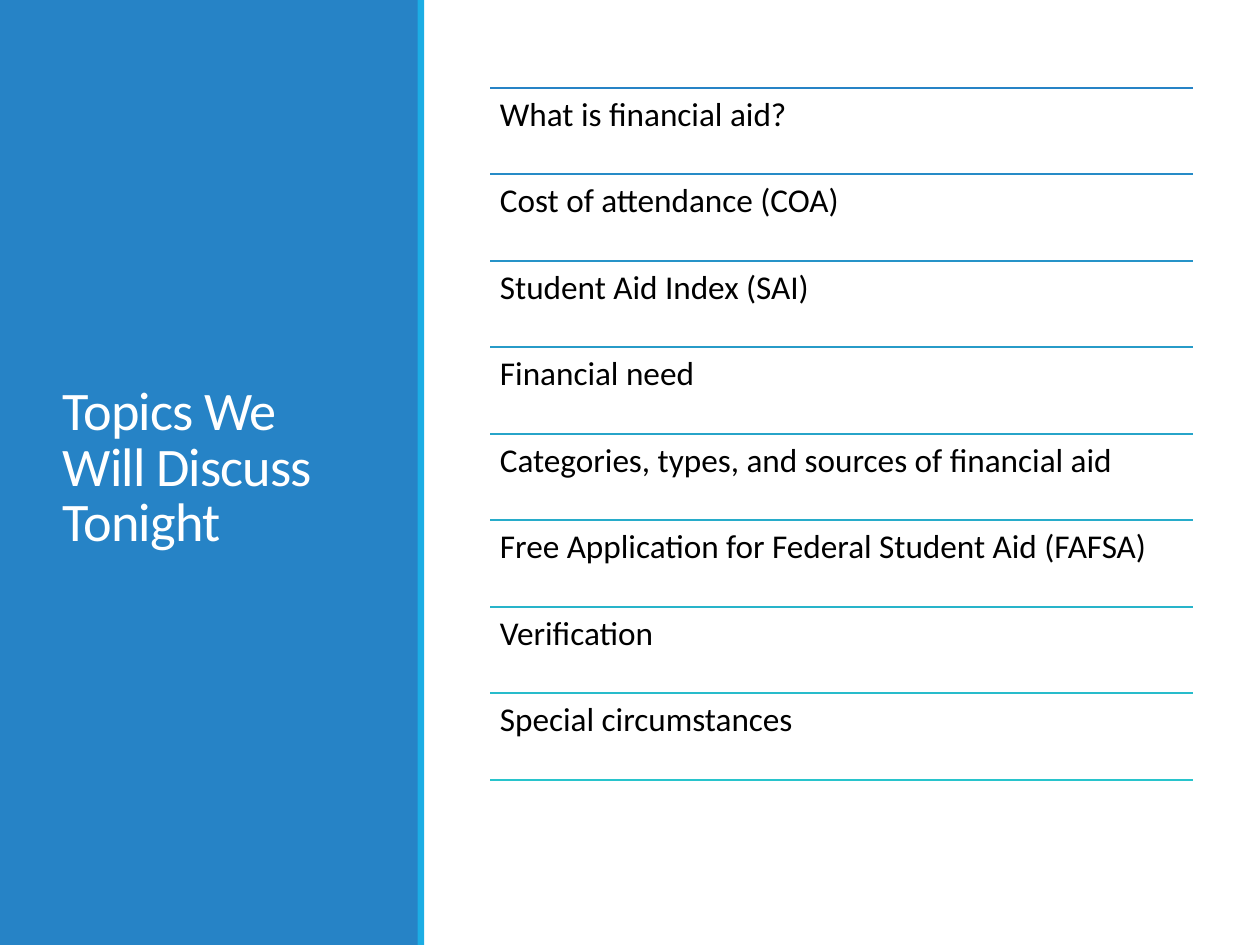
import dataclasses

import pptx
import pptx.dml.color
import pptx.enum.shapes
import pptx.enum.text
import pptx.oxml.ns
import pptx.util
from lxml import etree

Cm = pptx.util.Cm
Pt = pptx.util.Pt
RGB = pptx.dml.color.RGBColor
Anchor = pptx.enum.text.MSO_ANCHOR


@dataclasses.dataclass(frozen=True)
class Theme:
    font: str = "Calibri"
    blue: tuple = (0x26, 0x83, 0xC6)
    teal: tuple = (0x28, 0xC4, 0xCC)
    sky: tuple = (0x1C, 0xAD, 0xE4)
    white: tuple = (255, 255, 255)
    black: tuple = (0, 0, 0)
    title: float = 31
    body: float = 19
    rule: float = 1.25


class Page:
    def __init__(self, slide, theme):
        self.slide = slide
        self.theme = theme

    def bar(self, left, top, width, height, color):
        shape = self.slide.shapes.add_shape(
            pptx.enum.shapes.MSO_SHAPE.RECTANGLE,
            Cm(left), Cm(top), Cm(width), Cm(height))
        shape.shadow.inherit = False
        shape.fill.solid()
        shape.fill.fore_color.rgb = RGB(*color)
        shape.line.fill.background()

    def rule(self, left, top, width, color):
        line = self.slide.shapes.add_connector(
            pptx.enum.shapes.MSO_CONNECTOR.STRAIGHT,
            Cm(left), Cm(top), Cm(left + width), Cm(top))
        line.line.color.rgb = RGB(*color)
        line.line.width = Pt(self.theme.rule)
        etree.SubElement(line._element.spPr, pptx.oxml.ns.qn("a:effectLst"))

    def text(self, words, left, top, width, height, size, color,
             space=0.9, inset=0.2, anchor=Anchor.TOP, track=0):
        box = self.slide.shapes.add_textbox(
            Cm(left), Cm(top), Cm(width), Cm(height))
        frame = box.text_frame
        frame.word_wrap = True
        frame.vertical_anchor = anchor
        frame.margin_left = frame.margin_right = Cm(inset)
        frame.margin_top = frame.margin_bottom = Cm(inset)
        para = frame.paragraphs[0]
        para.line_spacing = space
        para.font.name = self.theme.font
        para.font.size = Pt(size)
        para.font.color.rgb = RGB(*color)
        run = para.add_run()
        run.text = words
        if track:
            # Letter spacing, in hundredths of a point
            run._r.get_or_add_rPr().set("spc", str(round(track * 100)))


def blend(start, end, part):
    return tuple(round(a + (b - a) * part) for a, b in zip(start, end))


TOPICS = [
    "What is financial aid?",
    "Cost of attendance (COA)",
    "Student Aid Index (SAI)",
    "Financial need",
    "Categories, types, and sources of financial aid",
    "Free Application for Federal Student Aid (FAFSA)",
    "Verification",
    "Special circumstances",
]


def main():
    deck = pptx.Presentation()
    deck.slide_width, deck.slide_height = Cm(25.4), Cm(19.05)
    theme = Theme()
    page = Page(deck.slides.add_slide(deck.slide_layouts[6]), theme)

    # Side panel with title
    page.bar(0, 0, 8.43, 19.05, theme.blue)
    page.text("Topics We Will Discuss Tonight", 1.02, 1.45, 6.43, 16.03,
              theme.title, theme.white, space=0.85, inset=0.25,
              anchor=Anchor.MIDDLE, track=-0.5)
    page.bar(8.42, 0, 0.13, 19.05, theme.sky)

    # Topic rows, with a rule above each and one below the last
    left, width = 9.88, 14.16
    top, end = 1.77, 15.72
    count = len(TOPICS)
    step = (end - top) / count
    for i in range(count + 1):
        y = top + i * step
        page.rule(left, y, width, blend(theme.blue, theme.teal, i / count))
        if i < count:
            page.text(TOPICS[i], left, y, width, step,
                      theme.body, theme.black)

    deck.save("out.pptx")


if __name__ == "__main__":
    main()
